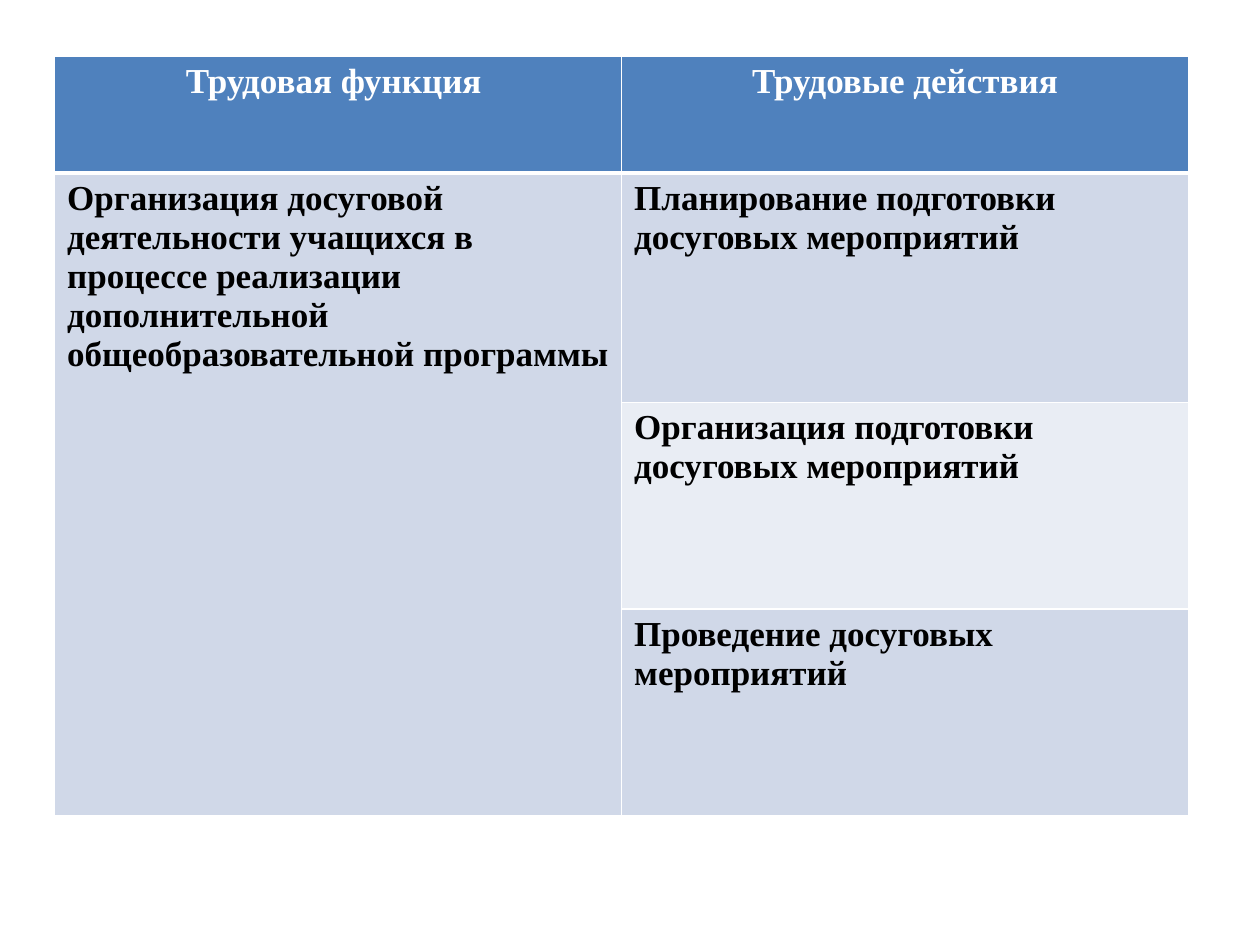
"""Build a slide with a table of one job function and its actions."""
from dataclasses import dataclass

from lxml import etree
from pptx import Presentation
from pptx.dml.color import RGBColor
from pptx.enum.text import PP_ALIGN
from pptx.oxml.ns import qn
from pptx.util import Cm, Pt

CENTER, LEFT = PP_ALIGN.CENTER, PP_ALIGN.LEFT
BLANK_LAYOUT = 6


@dataclass(frozen=True)
class Theme:
    font: str = "Times New Roman"
    size: int = 20
    header_fill: str = "4F81BD"
    header_text: str = "FFFFFF"
    body_text: str = "000000"
    bands: tuple = ("D0D8E8", "E9EDF4")
    border: str = "FFFFFF"
    border_width: int = 1
    header_rule: int = 3


class SlideBuilder:
    def __init__(self, slide, theme):
        self.slide = slide
        self.theme = theme

    def border(self, cell, side, width):
        tc_pr = cell._tc.get_or_add_tcPr()
        line = etree.SubElement(tc_pr, qn(f"a:ln{side}"), w=str(Pt(width)))
        fill = etree.SubElement(line, qn("a:solidFill"))
        etree.SubElement(fill, qn("a:srgbClr"), val=self.theme.border)

    def cell(self, cell, text, row):
        t = self.theme
        header = row == 0
        widths = {side: t.border_width for side in "LRTB"}
        if header:
            widths["B"] = t.header_rule
        elif row == 1:
            widths["T"] = t.header_rule
        for side, width in widths.items():
            self.border(cell, side, width)
        fill = t.header_fill if header else t.bands[(row - 1) % 2]
        cell.fill.solid()
        cell.fill.fore_color.rgb = RGBColor.from_string(fill)
        if not text:
            return
        p = cell.text_frame.paragraphs[0]
        p.alignment = CENTER if header else LEFT
        r = p.add_run()
        r.text = text
        r.font.name = t.font
        r.font.size = Pt(t.size)
        r.font.bold = True
        color = t.header_text if header else t.body_text
        r.font.color.rgb = RGBColor.from_string(color)

    def table(self, left, top, col_widths, row_heights, rows):
        frame = self.slide.shapes.add_table(
            len(row_heights), len(col_widths), Cm(left), Cm(top),
            Cm(sum(col_widths)), Cm(sum(row_heights)))
        table = frame.table
        for column, width in zip(table.columns, col_widths):
            column.width = Cm(width)
        for row, height in zip(table.rows, row_heights):
            row.height = Cm(height)
        for i, texts in enumerate(rows):
            for j, text in enumerate(texts):
                self.cell(table.cell(i, j), text, i)
        return table


def main():
    prs = Presentation()
    prs.slide_width, prs.slide_height = Cm(25.4), Cm(19.05)
    slide = prs.slides.add_slide(prs.slide_layouts[BLANK_LAYOUT])
    builder = SlideBuilder(slide, Theme())
    rows = [
        ("Трудовая функция ", "Трудовые действия"),
        ("Организация досуговой деятельности учащихся в процессе реализации "
         "дополнительной общеобразовательной программы",
         "Планирование подготовки досуговых мероприятий"),
        ("", "Организация подготовки досуговых мероприятий"),
        ("", "Проведение досуговых мероприятий"),
    ]
    table = builder.table(1.1, 1.13, [11.43] * 2, [2.36, 4.62, 4.17, 4.17], rows)
    table.cell(1, 0).merge(table.cell(3, 0))
    prs.save("out.pptx")


if __name__ == "__main__":
    main()
